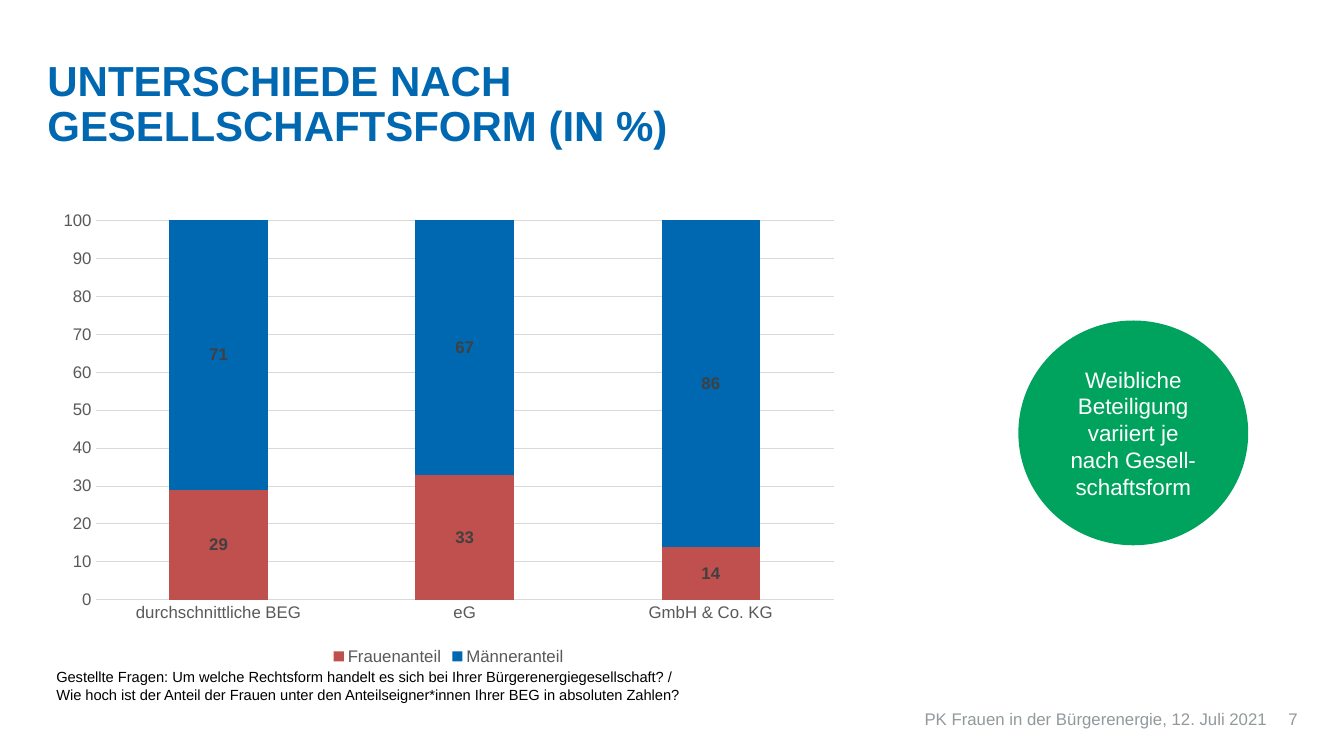
from dataclasses import dataclass

from lxml import etree
from pptx import Presentation
from pptx import util as u
from pptx.chart.data import CategoryChartData
from pptx.dml.color import RGBColor
from pptx.enum import chart as ch
from pptx.enum import shapes, text
from pptx.oxml import parse_xml
from pptx.oxml.ns import nsdecls, qn

FONT = "Arial"
BLUE = "0067B1"
RED = "C0504D"
GREEN = "00A35D"
GREY = "92999C"
AXIS_TEXT = "595959"
GRID = "D9D9D9"

Box = tuple[float, float, float, float]


@dataclass
class Share:
    name: str
    values: tuple[int, ...]
    color: str


@dataclass
class Note:
    lines: list[str]
    box: Box
    size: float
    color: str
    align: text.PP_ALIGN = text.PP_ALIGN.LEFT
    margins: tuple[float, float] = (0, 0)


LEGAL_FORMS = ["durchschnittliche BEG", "eG", "GmbH & Co. KG"]
SHARES = [
    Share("Frauenanteil", (29, 33, 14), RED),
    Share("Männeranteil", (71, 67, 86), BLUE),
]
NOTES = [
    Note(["PK Frauen in der Bürgerenergie, 12. Juli 2021"],
         (7.28, 7.03, 5.29, 0.2), 12, GREY, text.PP_ALIGN.RIGHT),
    Note(["7"], (12.57, 7.03, 0.3, 0.2), 12, GREY, text.PP_ALIGN.RIGHT),
    Note(["Gestellte Fragen: Um welche Rechtsform handelt es sich bei Ihrer "
          "Bürgerenergiegesellschaft? /",
          "Wie hoch ist der Anteil der Frauen unter den Anteilseigner*innen "
          "Ihrer BEG in absoluten Zahlen?"],
         (0.46, 6.58, 8.35, 0.45), 10.5, "000000", margins=(0.1, 0.05)),
]


def rgb(color: str) -> RGBColor:
    return RGBColor.from_string(color)


def inches(box: Box) -> list[u.Length]:
    return [u.Inches(value) for value in box]


def style_font(font, size: float, color: str, bold: bool = False) -> None:
    font.name = FONT
    font.size = u.Pt(size)
    font.bold = bold
    font.color.rgb = rgb(color)


def write(frame, lines: list[str], *, size: float, color: str, bold: bool = False,
          align: text.PP_ALIGN = text.PP_ALIGN.LEFT,
          anchor: text.MSO_ANCHOR = text.MSO_ANCHOR.TOP,
          margins: tuple[float, float] = (0, 0),
          spacing: float | None = None) -> None:
    frame.word_wrap = True
    frame.auto_size = text.MSO_AUTO_SIZE.NONE
    frame.vertical_anchor = anchor
    frame.margin_left = frame.margin_right = u.Inches(margins[0])
    frame.margin_top = frame.margin_bottom = u.Inches(margins[1])
    for index, line in enumerate(lines):
        paragraph = frame.add_paragraph() if index else frame.paragraphs[0]
        paragraph.alignment = align
        if spacing:
            paragraph.line_spacing = u.Pt(spacing)
        run = paragraph.add_run()
        run.text = line
        style_font(run.font, size, color, bold)


def add_note(slide, note: Note) -> None:
    frame = slide.shapes.add_textbox(*inches(note.box)).text_frame
    write(frame, note.lines, size=note.size, color=note.color,
          align=note.align, margins=note.margins)


def add_heading(slide) -> None:
    heading = slide.shapes.title
    heading.left, heading.top, heading.width, heading.height = inches((0.47, 0.62, 8.07, 0.87))
    write(heading.text_frame, ["UNTERSCHIEDE NACH GESELLSCHAFTSFORM (IN %)"], size=30,
          color=BLUE, bold=True, anchor=text.MSO_ANCHOR.BOTTOM, spacing=32)


def place_plot(chart, box: Box) -> None:
    plot_area = chart._chartSpace.find(".//" + qn("c:plotArea"))
    for old in plot_area.findall(qn("c:layout")):
        plot_area.remove(old)
    layout = parse_xml(f"<c:layout {nsdecls('c')}><c:manualLayout/></c:layout>")
    settings = [("layoutTarget", "inner"), ("xMode", "edge"), ("yMode", "edge"),
                *zip("xywh", map(str, box))]
    for tag, value in settings:
        etree.SubElement(layout[0], qn(f"c:{tag}")).set("val", value)
    plot_area.insert(0, layout)


def add_share_chart(slide) -> None:
    shares = CategoryChartData()
    shares.categories = LEGAL_FORMS
    for share in SHARES:
        shares.add_series(share.name, share.values)
    chart = slide.shapes.add_chart(ch.XL_CHART_TYPE.COLUMN_STACKED,
                                   *inches((0.47, 2.05, 7.96, 4.59)), shares).chart
    style_font(chart.font, 10, "000000")
    chart.has_title = False
    chart.has_legend = True
    chart.legend.position = ch.XL_LEGEND_POSITION.BOTTOM
    chart.legend.include_in_layout = False
    style_font(chart.legend.font, 12, AXIS_TEXT)

    for axis in (chart.category_axis, chart.value_axis):
        axis.major_tick_mark = axis.minor_tick_mark = ch.XL_TICK_MARK.NONE
        style_font(axis.tick_labels.font, 12, AXIS_TEXT)
    chart.value_axis.minimum_scale = 0
    chart.value_axis.maximum_scale = 100
    chart.value_axis.major_unit = 10
    chart.value_axis.format.line.fill.background()
    for line in (chart.category_axis.format.line,
                 chart.value_axis.major_gridlines.format.line):
        line.color.rgb = rgb(GRID)
        line.width = u.Pt(0.75)

    columns = chart.plots[0]
    columns.gap_width = 150
    columns.overlap = 100
    columns.vary_by_categories = False
    for series, share in zip(columns.series, SHARES):
        series.format.fill.solid()
        series.format.fill.fore_color.rgb = rgb(share.color)
        labels = series.data_labels
        labels.show_value = True
        labels.position = ch.XL_LABEL_POSITION.CENTER
        style_font(labels.font, 12, "404040", bold=True)
    place_plot(chart, (0.06, 0.03, 0.92, 0.82))


def add_finding(slide) -> None:
    finding = slide.shapes.add_shape(shapes.MSO_SHAPE.OVAL, *inches((10.1, 3.18, 2.28, 2.23)))
    finding.shadow.inherit = False
    finding.fill.solid()
    finding.fill.fore_color.rgb = rgb(GREEN)
    finding.line.fill.background()
    write(finding.text_frame, ["Weibliche Beteiligung variiert je nach Gesell-schaftsform"],
          size=16, color="FFFFFF", align=text.PP_ALIGN.CENTER,
          anchor=text.MSO_ANCHOR.MIDDLE, margins=(0.1, 0.05))


def main() -> None:
    deck = Presentation()
    deck.slide_width, deck.slide_height = u.Inches(13.33), u.Inches(7.5)
    slide = deck.slides.add_slide(deck.slide_layouts.get_by_name("Title Only"))
    add_heading(slide)
    add_share_chart(slide)
    for note in NOTES:
        add_note(slide, note)
    add_finding(slide)
    deck.save("out.pptx")


if __name__ == "__main__":
    main()
